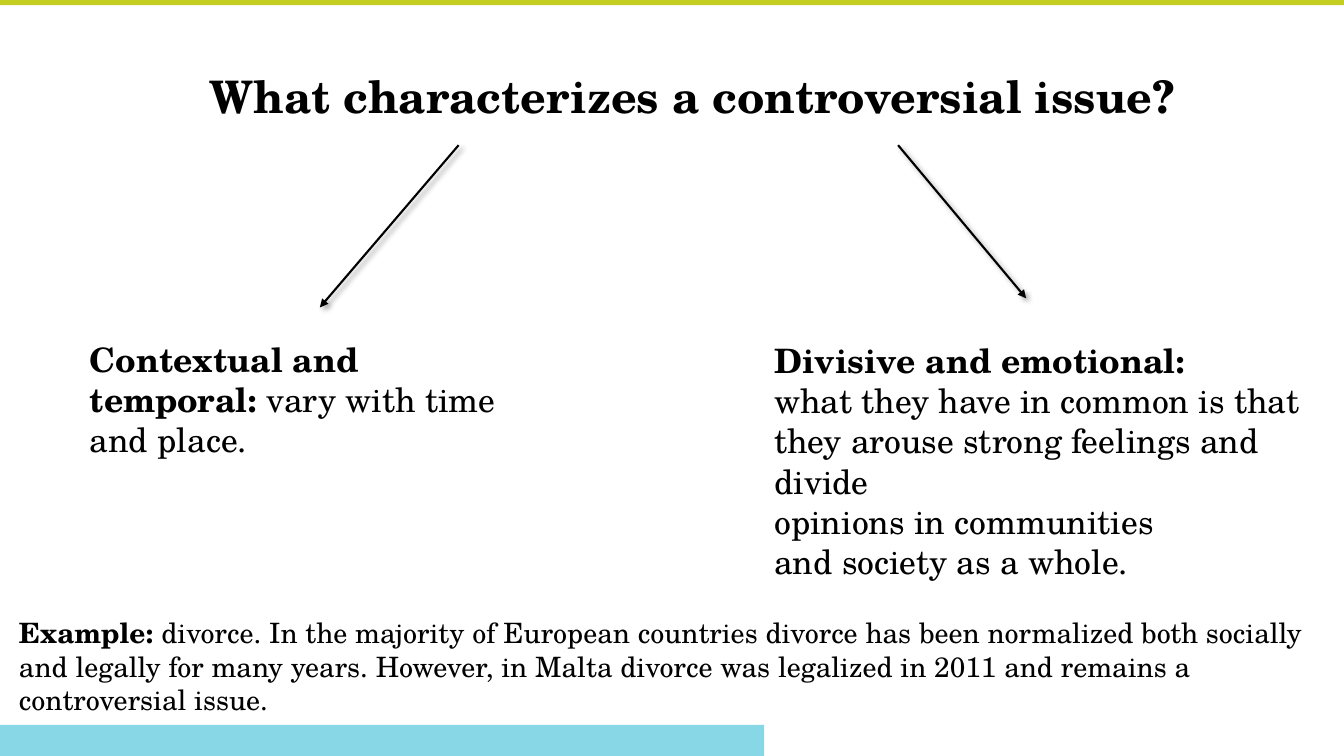
from lxml import etree
from pptx import Presentation
from pptx.dml.color import RGBColor
from pptx.enum.shapes import MSO_CONNECTOR, MSO_SHAPE
from pptx.enum.text import MSO_ANCHOR as Anchor, MSO_AUTO_SIZE as AutoSize, PP_ALIGN as Align
from pptx.oxml import parse_xml
from pptx.oxml.ns import nsdecls, qn
from pptx.util import Pt

FONT = "TeX Gyre Schola"
BLACK = RGBColor(0x00, 0x00, 0x00)
LIME = RGBColor(0xC4, 0xCD, 0x21)
CYAN = RGBColor(0x00, 0xAB, 0xCD)

TITLE = [[("What characterizes a controversial issue?", True)]]
CONTEXTUAL = [[("Contextual and temporal: ", True), ("vary with time and place.", False)]]
DIVISIVE = [
    [("Divisive and emotional:", True)],
    [("what they have in common is that", False)],
    [("they arouse strong feelings and divide", False)],
    [("opinions in communities", False)],
    [("and society as a whole.", False)],
]
EXAMPLE = [[
    ("Example: ", True),
    ("divorce. In the majority of European countries divorce has been normalized both "
     "socially and legally for many years. However, in Malta divorce was legalized in 2011 "
     "and remains a controversial issue.", False),
]]


def place(shape, left, top, width, height):
    shape.left, shape.top = Pt(left), Pt(top)
    shape.width, shape.height = Pt(width), Pt(height)


def remove_bullet(paragraph):
    properties = paragraph._p.get_or_add_pPr()
    properties.set("marL", "0")
    properties.set("indent", "0")
    etree.SubElement(properties, qn("a:buNone"))


def write_text(shape, paragraphs, size=24, line_spacing=1.0):
    frame = shape.text_frame
    frame.word_wrap = True
    frame.auto_size = AutoSize.NONE
    frame.vertical_anchor = Anchor.TOP
    for index, runs in enumerate(paragraphs):
        paragraph = frame.add_paragraph() if index else frame.paragraphs[0]
        paragraph.alignment = Align.LEFT
        paragraph.line_spacing = line_spacing
        paragraph.space_before = Pt(0)
        remove_bullet(paragraph)
        for text, bold in runs:
            run = paragraph.add_run()
            run.text = text
            run.font.name = FONT
            run.font.size = Pt(size)
            run.font.bold = bold
            run.font.color.rgb = BLACK


def add_band(slide, top, width, height, color, opacity=100):
    band = slide.shapes.add_shape(MSO_SHAPE.RECTANGLE, Pt(0), Pt(top), Pt(width), Pt(height))
    band.shadow.inherit = False
    band.fill.solid()
    band.fill.fore_color.rgb = color
    band.line.fill.background()
    if opacity < 100:
        color_element = band._element.spPr.find(".//" + qn("a:srgbClr"))
        etree.SubElement(color_element, qn("a:alpha"), val=str(opacity * 1000))


def add_arrow(slide, start, end):
    points = [Pt(value) for value in (*start, *end)]
    arrow = slide.shapes.add_connector(MSO_CONNECTOR.STRAIGHT, *points)
    arrow.line.color.rgb = BLACK
    arrow.line.width = Pt(1.5)
    etree.SubElement(arrow.line._get_or_add_ln(), qn("a:tailEnd"), type="triangle")
    arrow._element.spPr.append(parse_xml(
        f'<a:effectLst {nsdecls("a")}>'
        f'<a:outerShdw blurRad="{Pt(4)}" dist="{Pt(3)}" dir="2700000" rotWithShape="0">'
        f'<a:srgbClr val="{BLACK}"><a:alpha val="40000"/></a:srgbClr>'
        '</a:outerShdw></a:effectLst>'))


def main():
    presentation = Presentation()
    presentation.slide_width, presentation.slide_height = Pt(960), Pt(540)
    slide = presentation.slides.add_slide(presentation.slide_layouts.get_by_name("Two Content"))
    title, contextual, divisive = list(slide.placeholders)[:3]

    add_band(slide, 0, 960, 3.6, LIME)
    add_band(slide, 517.7, 545.8, 22.3, CYAN, opacity=47)

    place(title, 142.6, 42.5, 851, 49)
    write_text(title, TITLE, size=32, line_spacing=1.07)
    add_arrow(slide, (327.6, 103.7), (228.5, 219.6))
    add_arrow(slide, (641.5, 103.7), (733, 213.1))

    place(contextual, 56.9, 238.3, 332, 87)
    write_text(contextual, CONTEXTUAL)
    place(divisive, 545.8, 239, 424, 153)
    write_text(divisive, DIVISIVE)

    example = slide.shapes.add_textbox(Pt(6.5), Pt(436.3), Pt(947), Pt(55.4))
    write_text(example, EXAMPLE, size=20)

    presentation.save("out.pptx")


if __name__ == "__main__":
    main()
